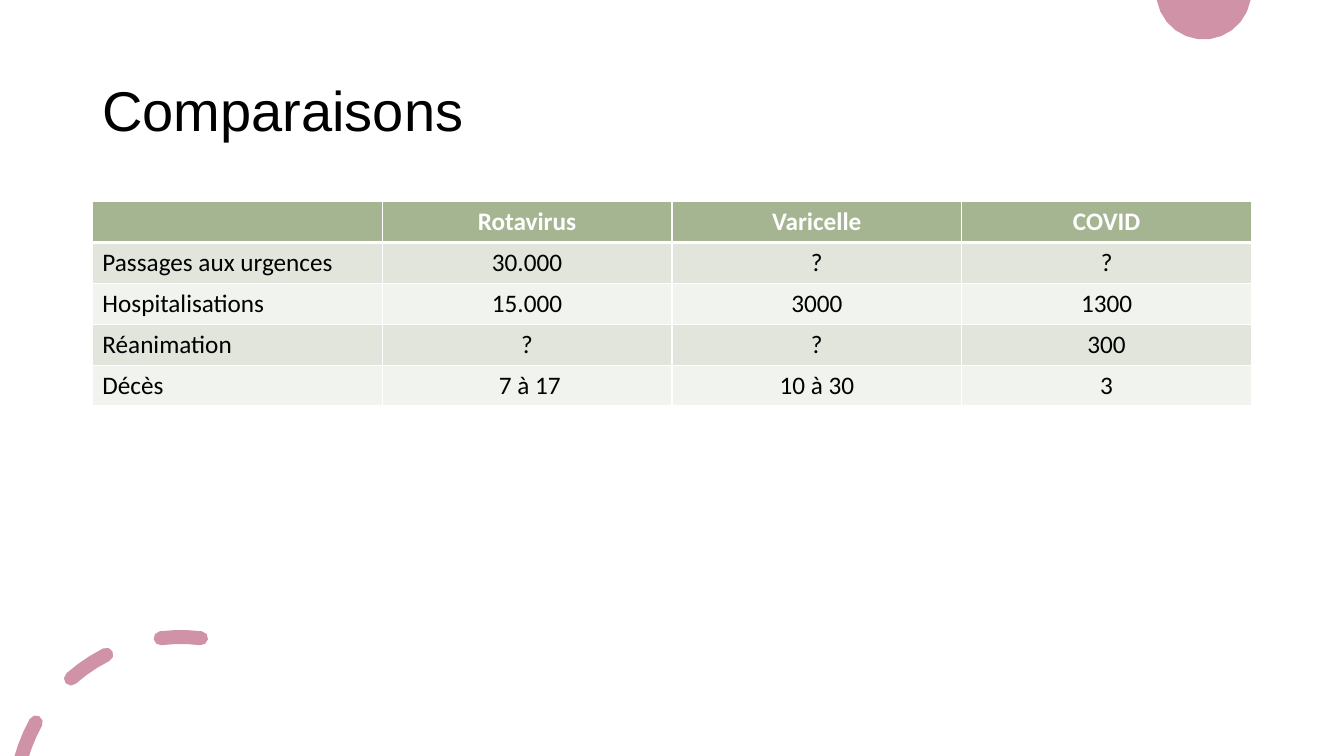
from dataclasses import dataclass
from math import acos, asin, cos, pi, radians, sin

from lxml import etree
from pptx import Presentation
from pptx.dml.color import RGBColor
from pptx.enum.text import MSO_ANCHOR, PP_ALIGN
from pptx.oxml.ns import qn
from pptx.util import Pt

LEFT, CENTER = PP_ALIGN.LEFT, PP_ALIGN.CENTER
MIDDLE = MSO_ANCHOR.MIDDLE
TITLE_ONLY = 5
SLIDE_WIDTH, SLIDE_HEIGHT = 960, 540


@dataclass(frozen=True)
class Theme:
    heading_font: str = "Arial"
    body_font: str = "Calibri"
    heading_size: int = 40
    body_size: int = 18
    black: str = "000000"
    white: str = "FFFFFF"
    pink: str = "D092A7"
    header: str = "A5B592"
    bands: tuple = ("E1E5DC", "F0F3EE")


THEME = Theme()
COMPARISON = [
    ("", "Rotavirus", "Varicelle", "COVID"),
    ("Passages aux urgences", "30.000", "?", "?"),
    ("Hospitalisations", "15.000", "3000", "1300"),
    ("Réanimation", "?", "?", "300"),
    ("Décès", " 7 à 17", "10 à 30", "3"),
]


def color(value):
    return RGBColor.from_string(value)


def add_run(paragraph, text, font_name, size, ink, bold=False):
    run = paragraph.add_run()
    run.text = text
    run.font.name, run.font.size, run.font.bold = font_name, Pt(size), bold
    run.font.color.rgb = color(ink)


def add_outline(slide, contours):
    """Draw closed contours, given as lists of points, as one pink shape."""
    contours = [[(Pt(x), Pt(y)) for x, y in contour] for contour in contours]
    builder = slide.shapes.build_freeform(*contours[0][0])
    for number, contour in enumerate(contours):
        if number:
            builder.move_to(*contour[0])
        builder.add_line_segments(contour[1:], close=True)
    shape = builder.convert_to_shape()
    shape.shadow.inherit = False
    shape.fill.solid()
    shape.fill.fore_color.rgb = color(THEME.pink)
    shape.line.fill.background()


def add_top_disc(slide, center_x, center_y, radius, steps=11):
    """Draw the part of a disc that lies below the top edge of the slide."""
    start = asin(-center_y / radius)
    angles = [start + (pi - 2 * start) * i / steps for i in range(steps + 1)]
    add_outline(slide, [[(center_x + radius * cos(a), center_y + radius * sin(a))
                         for a in angles]])


def dash_contour(center_x, center_y, radius, half_width, start, end, steps=3):
    """Outline a round-ended arc, angles in degrees left of the vertical."""
    start, end = radians(start), radians(end)
    fractions = [i / steps for i in range(steps + 1)]
    outer = [(radius + half_width, start + (end - start) * f) for f in fractions]
    inner = [(radius - half_width, start + (end - start) * f) for f in fractions]
    cap = [(radius + half_width * cos(turn), half_width * sin(turn) / radius)
           for turn in (pi / 4, pi / 2, 3 * pi / 4)]
    end_cap = [(r, end + turn) for r, turn in cap]
    start_cap = [(r, start - turn) for r, turn in cap]
    contour = []
    for r, angle in outer + end_cap + inner[::-1] + start_cap[::-1]:
        angle = min(angle, acos((center_y - SLIDE_HEIGHT) / r))
        contour.append((center_x - r * sin(angle), center_y - r * cos(angle)))
    return contour


def add_dashed_arc(slide, center_x, center_y, radius, half_width):
    spans = [(-7, 7), (26.7, 41.5), (61, 75)]
    add_outline(slide, [dash_contour(center_x, center_y, radius, half_width, *span)
                        for span in spans])


def add_title(slide, text, left, top, width, height):
    title = slide.shapes.title
    title.left, title.top = Pt(left), Pt(top)
    title.width, title.height = Pt(width), Pt(height)
    title.text_frame.vertical_anchor = MIDDLE
    paragraph = title.text_frame.paragraphs[0]
    paragraph.alignment = LEFT
    paragraph.line_spacing = 0.9
    add_run(paragraph, text, THEME.heading_font, THEME.heading_size, THEME.black)


def set_borders(cell, bottom):
    """Give a cell white borders, 1 pt wide except at the bottom."""
    properties = cell._tc.get_or_add_tcPr()
    widths = {"a:lnL": 1, "a:lnR": 1, "a:lnT": 1, "a:lnB": bottom}
    for position, (tag, width) in enumerate(widths.items()):
        border = etree.Element(qn(tag), w=str(Pt(width)))
        fill = etree.SubElement(border, qn("a:solidFill"))
        etree.SubElement(fill, qn("a:srgbClr"), val=THEME.white)
        properties.insert(position, border)


def add_comparison(slide, rows, left, top, width, height):
    frame = slide.shapes.add_table(len(rows), len(rows[0]), Pt(left), Pt(top),
                                   Pt(width), Pt(height))
    for r, row in enumerate(rows):
        is_header = r == 0
        background = THEME.header if is_header else THEME.bands[(r - 1) % 2]
        ink = THEME.white if is_header else THEME.black
        for c, text in enumerate(row):
            cell = frame.table.cell(r, c)
            cell.fill.solid()
            cell.fill.fore_color.rgb = color(background)
            set_borders(cell, bottom=3 if is_header else 1)
            paragraph = cell.text_frame.paragraphs[0]
            paragraph.alignment = CENTER if c else LEFT
            if text:
                add_run(paragraph, text, THEME.body_font, THEME.body_size, ink,
                        bold=is_header)


def main():
    presentation = Presentation()
    presentation.slide_width = Pt(SLIDE_WIDTH)
    presentation.slide_height = Pt(SLIDE_HEIGHT)
    slide = presentation.slides.add_slide(presentation.slide_layouts[TITLE_ONLY])
    margin = 66
    content_width = SLIDE_WIDTH - 2 * margin
    add_top_disc(slide, 859.8, -5.8, 34)
    add_dashed_arc(slide, 129.2, 573.4, 118.4, 5)
    add_title(slide, "Comparaisons", margin, 28.8, content_width, 104.4)
    add_comparison(slide, COMPARISON, margin, 144, content_width, 146)
    presentation.save("out.pptx")


if __name__ == "__main__":
    main()
